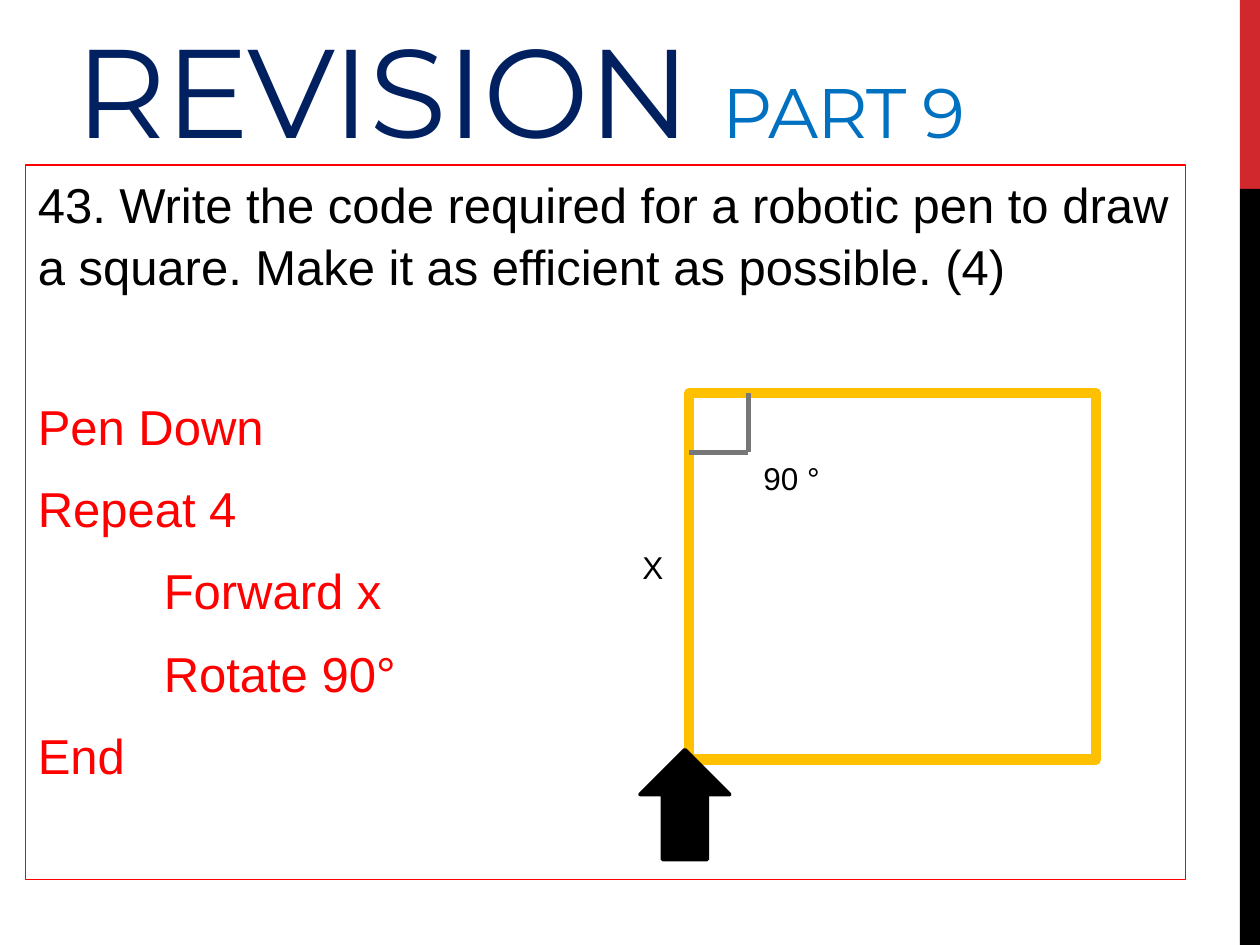
from lxml import etree
from pptx import Presentation
from pptx.dml.color import RGBColor
from pptx.enum.shapes import MSO_CONNECTOR, MSO_SHAPE
from pptx.enum.text import MSO_ANCHOR, MSO_AUTO_SIZE, PP_ALIGN
from pptx.oxml.ns import qn
from pptx.util import Inches, Pt

BLACK, RED, GREY = "000000", "FF0000", "777777"
SIDEBAR_RED, GOLD, NAVY, BLUE = "D1282E", "FFC000", "002060", "0070C0"

QUESTION = ("43. Write the code required for a robotic pen to draw a square. "
            "Make it as efficient as possible. (4)")
# Each line of code with its indent in inches
CODE = [("Pen Down", 0), ("Repeat 4", 0), ("Forward x", 1), ("Rotate 90°", 1), ("End", 0)]


def color(value):
    return RGBColor.from_string(value)


def add_text(paragraph, text, size=28, font="Arial", fill=BLACK, spacing=None):
    """Append a formatted run; spacing is between letters, in points."""
    run = paragraph.add_run()
    run.text = text
    run.font.size = Pt(size)
    run.font.name = font
    run.font.color.rgb = color(fill)
    if spacing is not None:
        run.font._element.set("spc", str(round(spacing * 100)))


class SlideBuilder:
    def __init__(self, slide):
        self.slide = slide

    def place(self, shape, left, top, width, height):
        shape.left, shape.top = Inches(left), Inches(top)
        shape.width, shape.height = Inches(width), Inches(height)

    def style(self, shape, fill=None, line=None, line_width=1):
        if fill:
            shape.fill.solid()
            shape.fill.fore_color.rgb = color(fill)
        else:
            shape.fill.background()
        if line:
            shape.line.color.rgb = color(line)
            shape.line.width = Pt(line_width)
        else:
            shape.line.fill.background()

    def shape(self, kind, left, top, width, height, rotation=0, **look):
        shape = self.slide.shapes.add_shape(
            kind, Inches(left), Inches(top), Inches(width), Inches(height))
        shape.shadow.inherit = False
        shape.rotation = rotation
        self.style(shape, **look)

    def title(self, box, runs):
        title = self.slide.shapes.title
        self.place(title, *box)
        frame = title.text_frame
        frame.auto_size = MSO_AUTO_SIZE.NONE
        frame.vertical_anchor = MSO_ANCHOR.BOTTOM
        paragraph = frame.paragraphs[0]
        paragraph.alignment = PP_ALIGN.LEFT
        for text, size, fill in runs:
            add_text(paragraph, text, size=size, font="Montserrat", fill=fill, spacing=-0.6)

    def body(self, box, question, code):
        body = self.slide.placeholders[1]
        self.place(body, *box)
        self.style(body, line=RED, line_width=0.75)
        frame = body.text_frame
        frame.auto_size = MSO_AUTO_SIZE.NONE
        self.body_line(frame.paragraphs[0], question)
        for index, (text, indent) in enumerate(code):
            self.body_line(frame.add_paragraph(), text, fill=RED, indent=indent,
                           before=50.5 if index == 0 else 5.6)

    def body_line(self, paragraph, text, fill=BLACK, indent=0, before=5.6):
        paragraph.line_spacing = 1.05
        paragraph.space_before, paragraph.space_after = Pt(before), Pt(6)
        properties = paragraph._p.get_or_add_pPr()
        properties.set("marL", str(Inches(indent)))
        properties.set("indent", "0")
        etree.SubElement(properties, qn("a:buNone"))
        add_text(paragraph, text, fill=fill)

    def label(self, text, left, top, width, height):
        box = self.slide.shapes.add_textbox(
            Inches(left), Inches(top), Inches(width), Inches(height))
        box.text_frame.word_wrap = True
        box.text_frame.auto_size = MSO_AUTO_SIZE.SHAPE_TO_FIT_TEXT
        add_text(box.text_frame.paragraphs[0], text, size=18)

    def line(self, start, end, fill, width):
        connector = self.slide.shapes.add_connector(
            MSO_CONNECTOR.STRAIGHT, *map(Inches, start + end))
        connector.line.color.rgb = color(fill)
        connector.line.width = Pt(width)
        etree.SubElement(connector._element.spPr, qn("a:effectLst"))


def main():
    presentation = Presentation()
    presentation.slide_width, presentation.slide_height = Inches(10), Inches(7.5)
    builder = SlideBuilder(presentation.slides.add_slide(presentation.slide_layouts[1]))

    builder.shape(MSO_SHAPE.RECTANGLE, 9.84, 0, 0.16, 1.5, fill=SIDEBAR_RED)
    builder.shape(MSO_SHAPE.RECTANGLE, 9.84, 1.5, 0.16, 6, fill=BLACK)
    builder.title((0.5, 0.05, 8.59, 1.3), [("REVISION ", 72, NAVY), ("PART 9", 40, BLUE)])
    builder.body((0.2, 1.31, 9.21, 5.67), QUESTION, CODE)

    left, top, corner = 5.47, 3.12, 0.47
    builder.shape(MSO_SHAPE.RECTANGLE, left, top, 3.23, 2.91, line=GOLD, line_width=6)
    builder.shape(MSO_SHAPE.DOWN_ARROW, 5.08, 5.95, 0.71, 0.87, rotation=180,
                  fill=BLACK, line=BLACK, line_width=2.25)
    builder.label("X", 5, 4.3, 0.39, 0.4)
    inner = (left + corner, top + corner)
    builder.line((left + corner, top), inner, GREY, 3)
    builder.line(inner, (left, top + corner), GREY, 3)
    builder.label("90 °", 5.96, 3.59, 0.69, 0.4)

    presentation.save("out.pptx")


if __name__ == "__main__":
    main()
